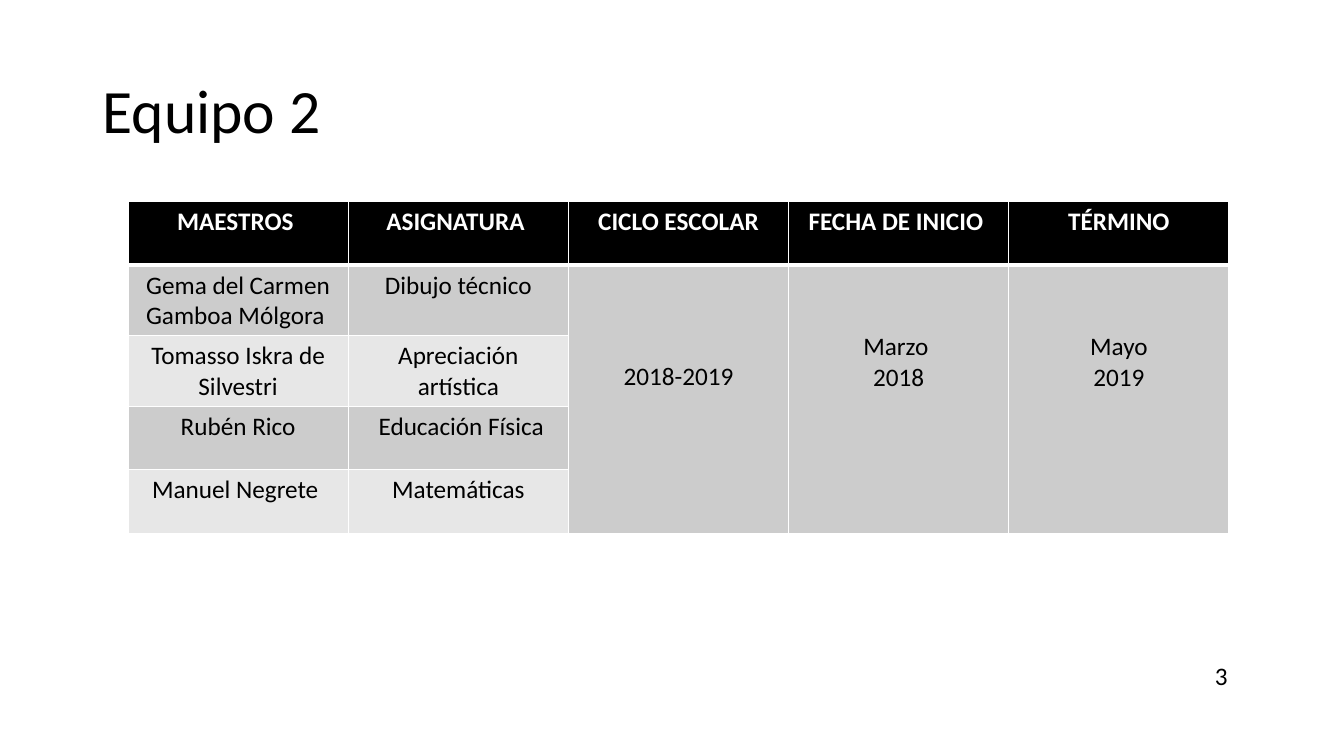
import dataclasses

import lxml.etree
import pptx
import pptx.dml.color
import pptx.enum.text
import pptx.oxml.ns
import pptx.util

# The slide is a grid of square cells, ten to the inch
GRID_COLUMNS, GRID_ROWS = 133.3, 75
FONT = "Calibri"
BODY_SIZE = 18
COLOURS = {
    "ink": "000000",
    "paper": "FFFFFF",
    "dark band": "CCCCCC",
    "light band": "E7E7E7",
}
Align = pptx.enum.text.PP_ALIGN
Anchor = pptx.enum.text.MSO_ANCHOR


@dataclasses.dataclass(frozen=True)
class Area:
    column: float
    row: float
    columns: float
    rows: float


@dataclasses.dataclass(frozen=True)
class Label:
    text: str
    area: Area
    size: int
    anchor: Anchor
    wrap: bool
    line_spacing: float


@dataclasses.dataclass(frozen=True)
class SharedCell:
    column: int
    text: str
    top_margin: float


LABELS = [
    Label("Equipo 2", Area(9.2, 4, 115, 14.5), 44, Anchor.MIDDLE, True, 0.9),
    Label("3", Area(119.5, 65, 3.3, 4), BODY_SIZE, Anchor.TOP, False, 1.0),
]

SCHEDULE_AREA = Area(12.7, 20, 109.2, 31.5)
HEADINGS = ["MAESTROS ", "ASIGNATURA ", "CICLO ESCOLAR", "FECHA DE INICIO ", "TÉRMINO"]
TEACHERS = [
    ("Gema del Carmen Gamboa Mólgora ", "Dibujo técnico"),
    ("Tomasso Iskra de Silvestri", "Apreciación artística"),
    ("Rubén Rico", " Educación Física"),
    ("Manuel Negrete ", "Matemáticas"),
]
SHARED_CELLS = [
    SharedCell(2, "2018-2019", 9.6),
    SharedCell(3, "Marzo \n2018", 6.6),
    SharedCell(4, "Mayo\n2019", 6.6),
]


def grid(units: float) -> pptx.util.Emu:
    return pptx.util.Inches(units / 10)


def colour(name: str) -> pptx.dml.color.RGBColor:
    return pptx.dml.color.RGBColor.from_string(COLOURS[name])


def format_text(frame, size: int, ink: str, bold: bool, align: Align) -> None:
    for para in frame.paragraphs:
        para.alignment = align
        for span in para.runs:
            span.font.name = FONT
            span.font.size = pptx.util.Pt(size)
            span.font.bold = bold
            span.font.color.rgb = colour(ink)


def draw_label(page, label: Label) -> None:
    area = label.area
    box = page.shapes.add_textbox(
        grid(area.column), grid(area.row), grid(area.columns), grid(area.rows)
    )
    frame = box.text_frame
    frame.text = label.text
    frame.word_wrap = label.wrap
    frame.vertical_anchor = label.anchor
    frame.paragraphs[0].line_spacing = label.line_spacing
    format_text(frame, label.size, "ink", False, Align.LEFT)


def set_borders(cell, top: float, bottom: float) -> None:
    properties = cell._tc.get_or_add_tcPr()
    widths = {"a:lnL": 1, "a:lnR": 1, "a:lnT": top, "a:lnB": bottom}
    for position, (tag, width) in enumerate(widths.items()):
        line = lxml.etree.Element(pptx.oxml.ns.qn(tag), w=str(pptx.util.Pt(width)))
        fill = lxml.etree.SubElement(line, pptx.oxml.ns.qn("a:solidFill"))
        lxml.etree.SubElement(fill, pptx.oxml.ns.qn("a:srgbClr"), val=COLOURS["paper"])
        properties.insert(position, line)


def style_cell(cell, row: int, column: int) -> None:
    header = row == 0
    if header:
        band = "ink"
    elif column >= len(TEACHERS[0]) or row % 2:
        band = "dark band"
    else:
        band = "light band"
    cell.fill.solid()
    cell.fill.fore_color.rgb = colour(band)
    set_borders(cell, top=3 if row == 1 else 1, bottom=3 if header else 1)
    format_text(cell.text_frame, BODY_SIZE, "paper" if header else "ink", header, Align.CENTER)


def draw_schedule(page, area: Area) -> None:
    row_count, column_count = len(TEACHERS) + 1, len(HEADINGS)
    table = page.shapes.add_table(
        row_count, column_count,
        grid(area.column), grid(area.row), grid(area.columns), grid(area.rows),
    ).table
    table.horz_banding = False

    # Headings and the cells of each teacher
    for row, texts in enumerate([HEADINGS, *TEACHERS]):
        for column, text in enumerate(texts):
            table.cell(row, column).text_frame.text = text

    # Dates shared by all teachers
    for shared in SHARED_CELLS:
        cell = table.cell(1, shared.column)
        cell.merge(table.cell(row_count - 1, shared.column))
        cell.text_frame.text = shared.text
        cell.margin_top = grid(shared.top_margin)

    for row in range(row_count):
        for column in range(column_count):
            style_cell(table.cell(row, column), row, column)


def main() -> None:
    deck = pptx.Presentation()
    deck.slide_width = grid(GRID_COLUMNS)
    deck.slide_height = grid(GRID_ROWS)
    page = deck.slides.add_slide(deck.slide_layouts[6])

    # Title and page number
    for label in LABELS:
        draw_label(page, label)

    # Schedule of the team
    draw_schedule(page, SCHEDULE_AREA)
    deck.save("out.pptx")


if __name__ == "__main__":
    main()
